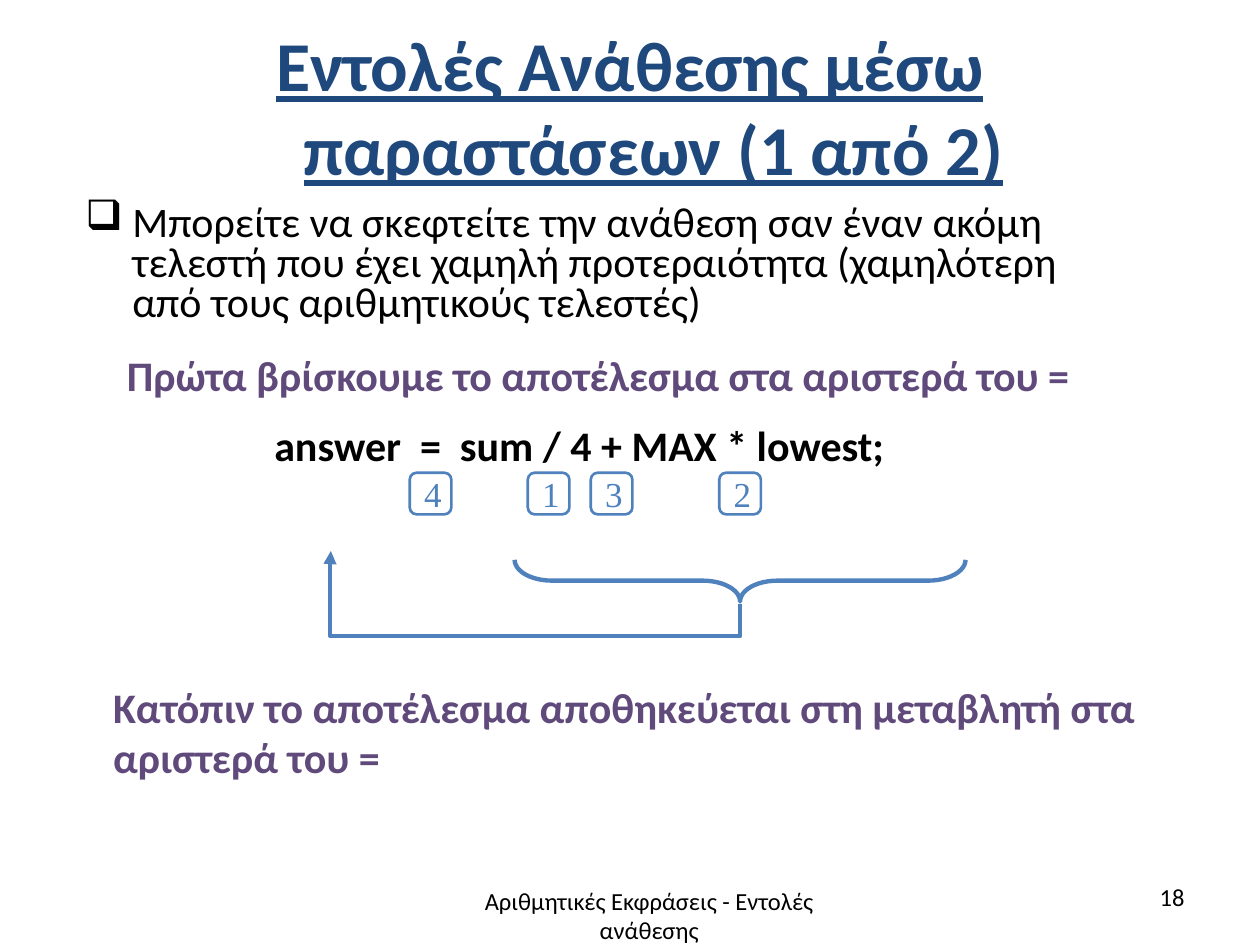
from lxml.etree import SubElement
from pptx import Presentation
from pptx.dml.color import RGBColor
from pptx.enum.shapes import MSO_CONNECTOR, MSO_SHAPE
from pptx.enum.text import MSO_ANCHOR, MSO_AUTO_SIZE, PP_ALIGN
from pptx.oxml.ns import qn
from pptx.util import Cm, Pt

NAVY = RGBColor(0x1F, 0x49, 0x7D)
BLUE = RGBColor(0x4F, 0x81, 0xBD)
PURPLE = RGBColor(0x60, 0x4A, 0x7B)
BLACK = RGBColor(0, 0, 0)

BADGE_TOP, BADGE_SIZE = 9.53, 0.84
# Evaluation order of each operator and the left edge of its badge
BADGES = [("4", 8.26), ("1", 10.64), ("3", 11.91), ("2", 14.5)]


def add_text(slide, box, lines, size=24, color=BLACK, bold=False,
             align=PP_ALIGN.LEFT, wrap=True, grow=False):
    shape = slide.shapes.add_textbox(*map(Cm, box))
    frame = shape.text_frame
    frame.word_wrap = wrap
    frame.auto_size = MSO_AUTO_SIZE.SHAPE_TO_FIT_TEXT if grow else MSO_AUTO_SIZE.NONE
    frame.text = "\n".join(lines)
    for paragraph in frame.paragraphs:
        paragraph.alignment = align
        font = paragraph.font
        font.name, font.size, font.bold = "Calibri", Pt(size), bold
        font.color.rgb = color
    return frame


def set_hanging_indent(paragraph, bullet=None):
    properties = paragraph._p.get_or_add_pPr()
    properties.set("marL", str(Cm(0.95)))
    properties.set("indent", str(-Cm(0.95)))
    if bullet:
        mark = properties.makeelement(qn("a:buChar"), {"char": bullet})
        properties.insert_element_before(mark, "a:tabLst", "a:defRPr", "a:extLst")


def add_outline(slide, kind, box, width):
    shape = slide.shapes.add_shape(kind, *map(Cm, box))
    shape.shadow.inherit = False
    shape.fill.background()
    shape.line.color.rgb = BLUE
    shape.line.width = Pt(width)
    return shape


def add_badge(slide, number, left):
    box = (left, BADGE_TOP, BADGE_SIZE, BADGE_SIZE)
    shape = add_outline(slide, MSO_SHAPE.ROUNDED_RECTANGLE, box, 1.5)
    frame = shape.text_frame
    frame.word_wrap = False
    frame.vertical_anchor = MSO_ANCHOR.MIDDLE
    frame.text = number
    paragraph = frame.paragraphs[0]
    paragraph.alignment = PP_ALIGN.LEFT
    paragraph.font.name, paragraph.font.size = "Times New Roman", Pt(20)
    paragraph.font.color.rgb = BLUE


def add_brace(slide):
    brace = add_outline(slide, MSO_SHAPE.LEFT_BRACE, (14.5, 7.16, 0.84, 9.09), 2.5)
    brace.adjustments[0] = 0.9
    brace.rotation = 270


def add_return_arrow(slide):
    # Laid out upright, then turned so that it runs from the brace to the variable
    ends = map(Cm, (10.26, 15.77, 11.33, 7.52))
    connector = slide.shapes.add_connector(MSO_CONNECTOR.ELBOW, *ends)
    connector.line.color.rgb = BLUE
    connector.line.width = Pt(2.5)
    properties = connector._element.spPr
    properties.find(qn("a:xfrm")).set("rot", "16200000")
    geometry = properties.find(qn("a:prstGeom"))
    geometry.set("prst", "bentConnector4")
    guides = geometry.find(qn("a:avLst"))
    for name, value in (("adj1", -60000), ("adj2", 100200)):
        SubElement(guides, qn("a:gd"), name=name, fmla=f"val {value}")
    SubElement(connector.line._get_or_add_ln(), qn("a:tailEnd"), type="triangle")
    SubElement(properties, qn("a:effectLst"))


def main():
    presentation = Presentation()
    presentation.slide_width, presentation.slide_height = Cm(25.4), Cm(19.05)
    slide = presentation.slides.add_slide(presentation.slide_layouts[6])

    # Title
    title = add_text(slide, (1.27, 0.33, 22.86, 3.61),
                     ["Εντολές Ανάθεσης μέσω παραστάσεων (1 από 2)"],
                     size=40, color=NAVY, bold=True, align=PP_ALIGN.CENTER)
    title.vertical_anchor = MSO_ANCHOR.MIDDLE
    heading = title.paragraphs[0]
    heading.font.underline = True
    heading.space_before = Pt(8)
    set_hanging_indent(heading)

    # Bulleted statement
    body = add_text(slide, (1.47, 4.01, 21.59, 2.9),
                    ["Μπορείτε να σκεφτείτε την ανάθεση σαν έναν ακόμη τελεστή που έχει "
                     "χαμηλή προτεραιότητα (χαμηλότερη από τους αριθμητικούς τελεστές)"])
    statement = body.paragraphs[0]
    statement.line_spacing = 0.8
    statement.space_before = Pt(12)
    set_hanging_indent(statement, "❑")

    # The two steps around the expression
    add_text(slide, (2.31, 6.93, 19.99, 1.27),
             ["Πρώτα βρίσκουμε το αποτέλεσμα στα αριστερά του ="],
             color=PURPLE, bold=True, grow=True)
    add_text(slide, (5.28, 8.33, 12.93, 1.27),
             ["answer  =  sum / 4 + MAX * lowest;"], bold=True, wrap=False, grow=True)
    add_text(slide, (2.03, 13.61, 21.46, 2.31),
             ["Κατόπιν το αποτέλεσμα αποθηκεύεται στη μεταβλητή στα", "αριστερά του ="],
             color=PURPLE, bold=True, wrap=False, grow=True)

    # Evaluation order and flow of the result
    for number, left in BADGES:
        add_badge(slide, number, left)
    add_brace(slide)
    add_return_arrow(slide)

    # Footer and slide number
    add_text(slide, (8.66, 17.73, 8.86, 1.4),
             ["Αριθμητικές Εκφράσεις - Εντολές ανάθεσης"], size=14, align=PP_ALIGN.CENTER)
    add_text(slide, (18.21, 17.65, 5.92, 1.02), ["18"], size=14, align=PP_ALIGN.RIGHT)

    presentation.save("out.pptx")


if __name__ == "__main__":
    main()
